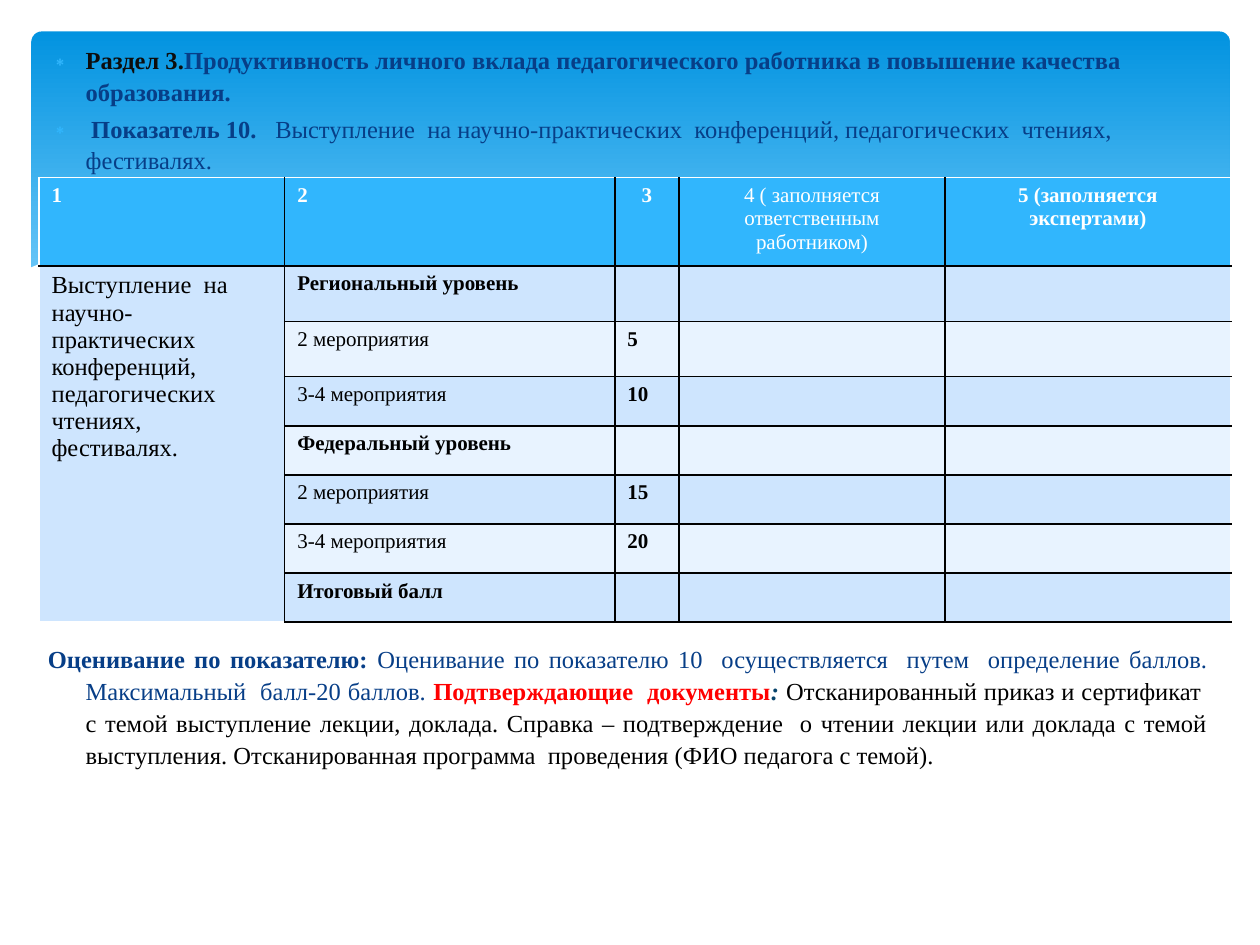
from dataclasses import dataclass
from itertools import product

from lxml import etree
from pptx import Presentation
from pptx import util as u
from pptx.dml.color import RGBColor
from pptx.enum import shapes, text
from pptx.oxml import ns

FONT = "Times New Roman"
WHITE, BLACK, NAVY, SKY = "FFFFFF", "000000", "073E87", "31B6FD"
BANDS = ("CEE5FE", "E8F3FF")
LEFT, CENTER, JUSTIFY = text.PP_ALIGN.LEFT, text.PP_ALIGN.CENTER, text.PP_ALIGN.JUSTIFY


@dataclass
class Wave:
    points: list[tuple[float, float]]
    fill: str | None = None
    opacity: int = 100


@dataclass
class Entry:
    label: str
    score: str = ""
    bold: bool = False


WAVES = [
    Wave([(9.75, 2), (9.35, 2.07), (8.91, 2.16), (8.32, 2.3), (7.79, 2.42), (7.29, 2.53),
          (6.61, 2.65), (7.05, 2.71), (7.45, 2.75), (8.03, 2.78), (8.54, 2.76), (8.97, 2.7),
          (9.35, 2.62), (9.76, 2.47), (9.76, 2)], "C6E7FC", 29),
    Wave([(8.93, 2.73), (8.37, 2.65), (7.75, 2.54), (7.06, 2.4), (6.29, 2.22), (5.69, 2.08),
          (5.14, 1.98), (4.65, 1.91), (4.2, 1.87), (3.61, 1.85), (3.13, 1.88), (2.86, 1.91),
          (3.42, 1.99), (4.04, 2.11), (4.91, 2.32), (5.66, 2.48), (6.34, 2.61), (6.95, 2.7),
          (7.48, 2.76), (8.07, 2.78), (8.57, 2.77), (8.93, 2.73)], "C6E7FC", 40),
    Wave([(3.09, 1.95), (3.44, 1.9), (4.01, 1.87), (4.5, 1.88), (5.1, 1.92), (5.82, 2),
          (6.65, 2.13), (7.6, 2.33), (8.31, 2.51), (9.07, 2.72)]),
    Wave([(6.13, 2.57), (6.72, 2.41), (7.48, 2.23), (8.36, 2.04), (8.95, 1.94),
          (9.38, 1.88), (9.75, 1.85)]),
    Wave([(9.77, 2.46), (9.4, 2.59), (8.99, 2.69), (8.5, 2.75), (8.09, 2.77), (7.44, 2.74),
          (6.88, 2.68), (6.26, 2.58), (5.55, 2.45), (4.47, 2.2), (3.65, 2.02), (2.92, 1.9),
          (2.3, 1.85), (1.77, 1.84), (1.19, 1.87), (0.76, 1.95), (0.46, 2.03), (0.23, 2.13),
          (0.23, 3.29), (9.77, 3.29)], WHITE),
]
HEADERS = ["1", "2", "3", "4 ( заполняется ответственным работником)",
           "5 (заполняется экспертами)"]
ENTRIES = [
    Entry("Региональный уровень", bold=True),
    Entry("2 мероприятия", "5"),
    Entry("3-4 мероприятия", "10"),
    Entry("Федеральный уровень", bold=True),
    Entry("2 мероприятия", "15"),
    Entry("3-4 мероприятия", "20"),
    Entry("Итоговый балл", bold=True),
]
TOPIC = ("Выступление  на научно-практических  конференций, педагогических  чтениях, "
         "фестивалях.")
COLUMN_WIDTHS = [1.95, 2.62, 0.51, 2.11, 2.27]
ROW_HEIGHTS = [0.7] + [0.44] * 2 + [0.39] * 5


def rgb(value: str) -> RGBColor:
    return RGBColor.from_string(value)


def add_xml(parent, tag: str, **attributes: str):
    return etree.SubElement(parent, ns.qn(tag), attributes)


def add_span(para, content: str, *, size: float = 14, color: str = NAVY, bold: bool = False,
             italic: bool = False, font: str = FONT) -> None:
    span = para.add_run()
    span.text = content
    span.font.size, span.font.name = u.Pt(size), font
    span.font.bold, span.font.italic = bold, italic
    span.font.color.rgb = rgb(color)


def draw_wave(page, wave: Wave) -> None:
    points = [(u.Inches(x), u.Inches(y)) for x, y in wave.points]
    builder = page.shapes.build_freeform(*points[0])
    builder.add_line_segments(points[1:], close=wave.fill is not None)
    shape = builder.convert_to_shape()
    shape.shadow.inherit = False
    if wave.fill is None:
        shape.fill.background()
        shape.line.color.rgb = rgb(WHITE)
        shape.line.width = u.Pt(0)
        return
    shape.fill.solid()
    shape.fill.fore_color.rgb = rgb(wave.fill)
    shape.line.fill.background()
    if wave.opacity < 100:
        color = shape.fill._xPr.find(".//" + ns.qn("a:srgbClr"))
        add_xml(color, "a:alpha", val=str(wave.opacity * 1000))


def draw_backdrop(page) -> None:
    panel = page.shapes.add_shape(shapes.MSO_SHAPE.ROUNDED_RECTANGLE, u.Inches(0.25),
                                  u.Inches(0.25), u.Inches(9.51), u.Inches(2.7))
    panel.adjustments[0] = 0.03
    panel.shadow.inherit = False
    panel.line.fill.background()
    panel.fill.gradient()
    panel.fill.gradient_angle = 270
    for stop, color, position in zip(panel.fill.gradient_stops, ("0293E0", "83D3FE"), (0, 0.9)):
        stop.color.rgb = rgb(color)
        stop.position = position
    for wave in WAVES:
        draw_wave(page, wave)


def format_para(para, *, before: float = 2.8, bullet: bool = True, align=LEFT) -> None:
    para.alignment, para.space_before, para.line_spacing = align, u.Pt(before), 1.08
    properties = para._p.get_or_add_pPr()
    properties.set("marL", str(u.Inches(0.3)))
    properties.set("indent", str(-u.Inches(0.3)))
    if bullet:
        add_xml(add_xml(properties, "a:buClr"), "a:srgbClr", val=SKY)
        add_xml(properties, "a:buChar", char="∗")
    else:
        add_xml(properties, "a:buNone")


def fill_body(body) -> None:
    body.left, body.top = u.Inches(0.28), u.Inches(0.29)
    body.width, body.height = u.Inches(9.41), u.Inches(7.06)
    frame = body.text_frame
    frame.auto_size, frame.word_wrap = text.MSO_AUTO_SIZE.NONE, True
    frame.vertical_anchor = text.MSO_ANCHOR.TOP

    section = frame.paragraphs[0]
    format_para(section)
    add_span(section, "Раздел 3.", color="0D0D0D", bold=True)
    add_span(section, "Продуктивность личного вклада педагогического работника в повышение "
                      "качества образования.", bold=True)

    indicator = frame.add_paragraph()
    format_para(indicator)
    add_span(indicator, " ", font="Calibri")
    add_span(indicator, "Показатель 10.   ", bold=True)
    add_span(indicator, TOPIC)

    scoring = frame.add_paragraph()
    format_para(scoring, before=267, bullet=False, align=JUSTIFY)
    add_span(scoring, "Оценивание по показателю:", bold=True)
    add_span(scoring, " Оценивание по показателю 10  осуществляется  путем  определение баллов. "
                      "Максимальный  балл-20 баллов. ")
    add_span(scoring, "Подтверждающие  документы", color="FF0000", bold=True)
    add_span(scoring, ": ", color="06436B", bold=True, italic=True)
    add_span(scoring, "Отсканированный приказ и сертификат  с темой выступление лекции, доклада. "
                      "Справка – подтверждение  о чтении лекции или доклада с темой выступления. "
                      "Отсканированная программа  проведения (ФИО педагога с темой).", color=BLACK)


def format_cell(cell, fill: str, borders: dict[str, str]) -> None:
    properties = cell._tc.get_or_add_tcPr()
    for side, color in borders.items():
        line = add_xml(properties, f"a:ln{side}", w=str(u.Pt(1)))
        add_xml(add_xml(line, "a:solidFill"), "a:srgbClr", val=color)
    cell.fill.solid()
    cell.fill.fore_color.rgb = rgb(fill)


def write_cell(cell, content: str, *, align=LEFT, **style) -> None:
    para = cell.text_frame.paragraphs[0]
    para.alignment = align
    if content:
        add_span(para, content, **style)
    else:
        add_xml(para._p, "a:endParaRPr", sz="1200")


def draw_table(page) -> None:
    row_count, column_count = len(ROW_HEIGHTS), len(COLUMN_WIDTHS)
    table = page.shapes.add_table(row_count, column_count, u.Inches(0.31), u.Inches(1.41),
                                  u.Inches(sum(COLUMN_WIDTHS)),
                                  u.Inches(sum(ROW_HEIGHTS))).table
    for column, width in zip(table.columns, COLUMN_WIDTHS):
        column.width = u.Inches(width)
    for row, height in zip(table.rows, ROW_HEIGHTS):
        row.height = u.Inches(height)
    for row, column in product(range(row_count), range(column_count)):
        topic = row > 0 and column == 0
        fill = SKY if row == 0 else BANDS[0] if topic else BANDS[(row - 1) % 2]
        format_cell(table.cell(row, column), fill, {
            "L": WHITE if column == 0 else BLACK,
            "R": WHITE if column == column_count - 1 else BLACK,
            "T": WHITE if row == 0 else BLACK,
            "B": WHITE if topic else BLACK,
        })
    table.cell(1, 0).merge(table.cell(row_count - 1, 0))
    for column, header in enumerate(HEADERS):
        write_cell(table.cell(0, column), header, size=12, color=WHITE, bold=column != 3,
                   align=CENTER if column > 1 else LEFT)
    write_cell(table.cell(1, 0), TOPIC, color=BLACK)
    for row, entry in enumerate(ENTRIES, 1):
        write_cell(table.cell(row, 1), entry.label, size=12, color=BLACK, bold=entry.bold)
        write_cell(table.cell(row, 2), entry.score, size=12, color=BLACK, bold=True)
        for column in (3, 4):
            write_cell(table.cell(row, column), "")


def main() -> None:
    deck = Presentation()
    deck.slide_width, deck.slide_height = u.Inches(10), u.Inches(7.5)
    page = deck.slides.add_slide(deck.slide_layouts[1])
    title, body = page.placeholders
    tree = page.shapes._spTree
    tree.remove(title._element)
    draw_backdrop(page)
    tree.append(body._element)
    fill_body(body)
    draw_table(page)
    deck.save("out.pptx")


if __name__ == "__main__":
    main()
